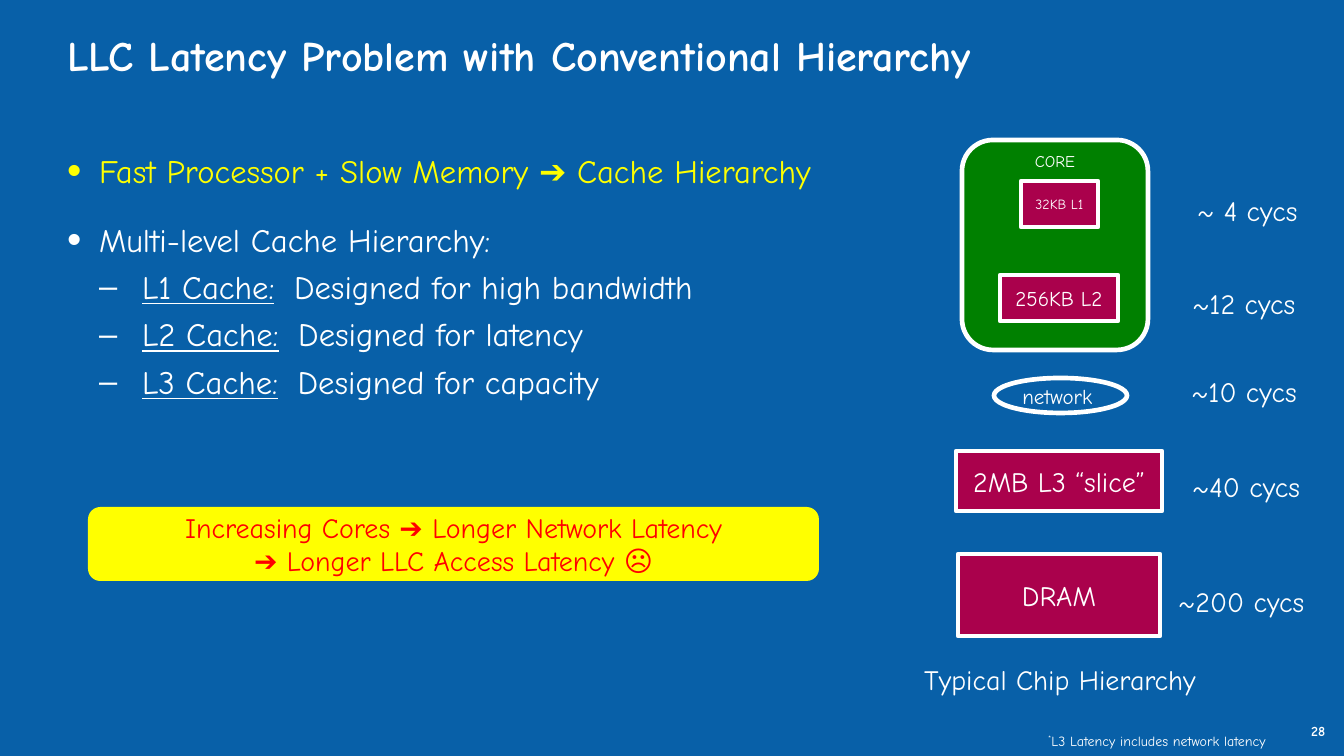
from dataclasses import dataclass

from lxml import etree
from pptx import Presentation, util as u
from pptx.dml.color import RGBColor
from pptx.enum import shapes, text
from pptx.oxml import ns

PX = 914400 / 84
AUTO = shapes.MSO_SHAPE
CENTER = text.PP_ALIGN.CENTER
LEFT = text.PP_ALIGN.LEFT


@dataclass(frozen=True)
class Theme:
    font: str = "Comic Neue"
    background: str = "0860A8"
    ink: str = "FFFFFF"
    accent: str = "FFFF00"
    alert: str = "FF0000"
    core: str = "008000"
    memory: str = "AA014C"
    title: int = 36
    body: int = 28
    label: int = 24
    small: int = 18
    caption: int = 14
    note: int = 12
    outline: int = 4


def emu(px):
    return u.Emu(round(px * PX))


def add_text(p, content, *, font, size, color, bold=False, underline=False, **attrs):
    """Add a run; attrs are extra run attributes such as baseline or spc."""
    r = p.add_run()
    r.text = content
    f = r.font
    f.name, f.size, f.bold, f.underline = font, u.Pt(size), bold, underline
    f.color.rgb = RGBColor.from_string(color)
    for name, value in attrs.items():
        f._element.set(name, str(value))


class SlideBuilder:
    def __init__(self, prs, theme):
        self.theme = theme
        self.s = prs.slides.add_slide(prs.slide_layouts[5])
        fill = self.s.background.fill
        fill.solid()
        fill.fore_color.rgb = RGBColor.from_string(theme.background)

    def run(self, p, content, **style):
        base = dict(font=self.theme.font, size=self.theme.label, color=self.theme.ink)
        add_text(p, content, **(base | style))

    def frame(self, sp, inset=0, wrap=True, anchor=text.MSO_ANCHOR.TOP):
        tf = sp.text_frame
        tf.word_wrap, tf.vertical_anchor = wrap, anchor
        tf.margin_left = tf.margin_right = emu(inset)
        tf.margin_top = tf.margin_bottom = emu(inset)
        return tf

    def title(self, content, box):
        sp = self.s.shapes.title
        sp.left, sp.top, sp.width, sp.height = map(emu, box)
        p = self.frame(sp).paragraphs[0]
        p.alignment = LEFT
        self.run(p, content, size=self.theme.title, bold=True)

    def block(self, kind, box, lines=(), fill=None, outlined=True,
              anchor=text.MSO_ANCHOR.MIDDLE, **style):
        sp = self.s.shapes.add_shape(kind, *map(emu, box))
        sp.shadow.inherit = False
        if fill:
            sp.fill.solid()
            sp.fill.fore_color.rgb = RGBColor.from_string(fill)
        else:
            sp.fill.background()
        if outlined:
            sp.line.color.rgb = RGBColor.from_string(self.theme.ink)
            sp.line.width = u.Pt(self.theme.outline)
        else:
            sp.line.fill.background()
        tf = self.frame(sp, inset=2, wrap=False, anchor=anchor)
        for i, line in enumerate(lines):
            p = tf.add_paragraph() if i else tf.paragraphs[0]
            p.alignment = CENTER
            self.run(p, line, **style)

    def label(self, content, box, align=LEFT, **style):
        """Add a one-line text box that fits its text, and return its paragraph."""
        sp = self.s.shapes.add_textbox(*map(emu, box))
        tf = sp.text_frame
        tf.word_wrap = False
        tf.auto_size = text.MSO_AUTO_SIZE.SHAPE_TO_FIT_TEXT
        p = tf.paragraphs[0]
        p.alignment = align
        self.run(p, content, **style)
        return p

    def bullet(self, p, char, left, hang, percent, before):
        pPr = p._p.get_or_add_pPr()
        pPr.set("marL", str(emu(left)))
        pPr.set("indent", str(emu(-hang)))
        p.space_before = u.Pt(before)
        etree.SubElement(pPr, ns.qn("a:buSzPct")).set("val", str(percent * 1000))
        etree.SubElement(pPr, ns.qn("a:buFont")).set("typeface", "Arial")
        etree.SubElement(pPr, ns.qn("a:buChar")).set("char", char)

    def bullets(self, box, points):
        """Add points given as (level, lead, rest, colour); a lead with a rest is underlined."""
        tf = self.frame(self.s.shapes.add_textbox(*map(emu, box)))
        size = self.theme.body
        for i, (level, lead, rest, color) in enumerate(points):
            p = tf.add_paragraph() if i else tf.paragraphs[0]
            if level == 0:
                self.bullet(p, "•", 32, 32, 125, 25 if i else 0)
            else:
                self.bullet(p, "–", 75, 43, 100, 7)
            self.run(p, lead, size=size, color=color, underline=bool(rest))
            if rest:
                self.run(p, " ", size=size, color=color, spc=750)
                self.run(p, rest, size=size, color=color)


def main():
    prs = Presentation()
    prs.slide_width, prs.slide_height = emu(1344), emu(756)
    t = Theme()
    s = SlideBuilder(prs, t)

    s.title("LLC Latency Problem with Conventional Hierarchy", (67, 30, 1210, 98))
    s.bullets((67, 151, 829, 276), [
        (0, "Fast Processor + Slow Memory ➔ Cache Hierarchy", "", t.accent),
        (0, "Multi-level Cache Hierarchy:", "", t.ink),
        (1, "L1 Cache:", "Designed for high bandwidth", t.ink),
        (1, "L2 Cache:", "Designed for latency", t.ink),
        (1, "L3 Cache:", "Designed for capacity", t.ink),
    ])
    s.block(AUTO.ROUNDED_RECTANGLE, (88, 507, 731, 74),
            ["Increasing Cores ➔ Longer Network Latency",
             "➔ Longer LLC Access Latency ☹"],
            fill=t.accent, outlined=False, color=t.alert)

    s.block(AUTO.ROUNDED_RECTANGLE, (962, 140, 186, 210), ["CORE"], fill=t.core,
            anchor=text.MSO_ANCHOR.TOP, size=t.caption)
    for name, size, box in [
        ("32KB L1", t.note, (1021, 181, 77, 46)),
        ("256KB L2", t.small, (1000, 275, 118, 46)),
        ("2MB L3 “slice”", t.label, (956, 451, 206, 60)),
        ("DRAM", t.label, (958, 554, 202, 82)),
    ]:
        s.block(AUTO.RECTANGLE, box, [name], fill=t.memory, size=size)
    s.block(AUTO.OVAL, (994, 378, 133, 35))
    s.label("network", (1014, 379, 97, 34), size=t.small)

    for latency, x, y, width in [
        ("~ 4 cycs", 1189, 189, 125),
        ("~12 cycs", 1184, 282, 129),
        ("~10 cycs", 1183, 370, 130),
        ("~40 cycs", 1184, 465, 134),
        ("~200 cycs", 1170, 580, 151),
    ]:
        s.label(latency, (x, y, width, 43))

    s.label("Typical Chip Hierarchy", (897, 658, 326, 43), align=CENTER)
    p = s.label("*", (1040, 728, 260, 25), size=t.note, baseline=30000)
    s.run(p, "L3 Latency includes network latency", size=t.note)
    s.label("28", (1303, 718, 41, 25), size=t.note, bold=True)

    prs.save("out.pptx")


if __name__ == "__main__":
    main()
